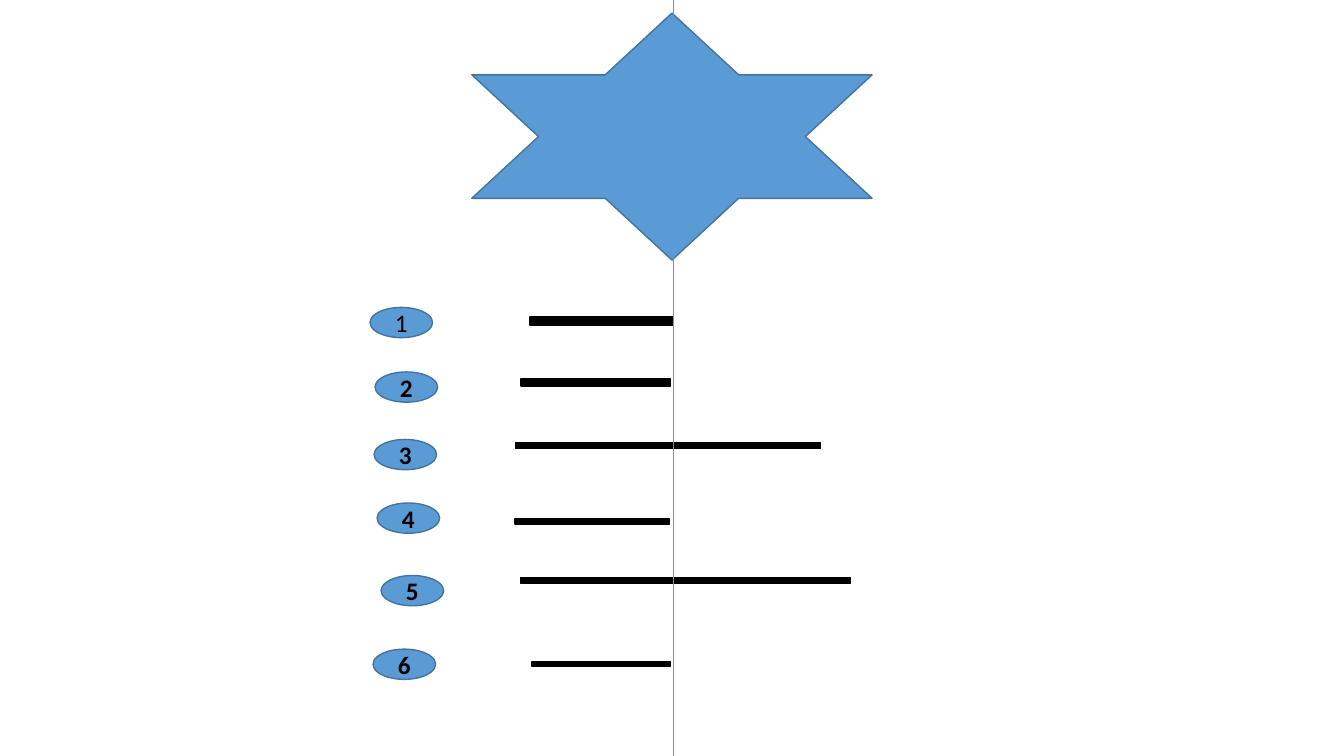
import pptx
import pptx.dml.color
import pptx.enum.shapes
import pptx.enum.text
import pptx.oxml
import pptx.oxml.ns
import pptx.util

Inches = pptx.util.Inches
Pt = pptx.util.Pt
PRESET = pptx.enum.shapes.MSO_SHAPE

BLUE = "5B9BD5"
DARK_BLUE = "43739E"
BLACK = "000000"


def colour(hex_value):
    return pptx.dml.color.RGBColor.from_string(hex_value)


class StarSlide:
    font = "Calibri"
    number_size = 18

    def __init__(self, deck):
        self.slide = deck.slides.add_slide(deck.slide_layouts[6])

    def figure(self, preset, left, top, width, height, fill, outline):
        figure = self.slide.shapes.add_shape(
            preset, Inches(left), Inches(top), Inches(width), Inches(height))
        figure.shadow.inherit = False
        figure.fill.solid()
        figure.fill.fore_color.rgb = colour(fill)
        figure.line.color.rgb = colour(outline)
        figure.line.width = Pt(1)
        return figure

    def star(self, left, top, width, height):
        self.figure(PRESET.STAR_6_POINT, left, top, width, height, BLUE, DARK_BLUE)

    def bar(self, left, top, width, height):
        self.figure(PRESET.MATH_MINUS, left, top, width, height, BLACK, BLACK)

    def number(self, label, left, top, bold):
        badge = self.figure(PRESET.OVAL, left, top, 0.62, 0.3, BLUE, DARK_BLUE)
        badge.text_frame.vertical_anchor = pptx.enum.text.MSO_ANCHOR.MIDDLE
        paragraph = badge.text_frame.paragraphs[0]
        paragraph.alignment = pptx.enum.text.PP_ALIGN.CENTER
        run = paragraph.add_run()
        run.text = label
        run.font.name = self.font
        run.font.size = Pt(self.number_size)
        run.font.bold = bold
        run.font.color.rgb = colour(BLACK)

    def axis(self, x, bottom):
        axis = self.slide.shapes.add_connector(
            pptx.enum.shapes.MSO_CONNECTOR.STRAIGHT,
            Inches(x), Inches(0), Inches(x), Inches(bottom))
        axis.line.color.rgb = colour(BLUE)
        axis.line.width = Pt(0.5)
        properties = axis._element.spPr
        properties.append(properties.makeelement(pptx.oxml.ns.qn("a:effectLst"), {}))


def main():
    deck = pptx.Presentation()
    deck.slide_width = Inches(13.33)
    deck.slide_height = Inches(7.5)
    page = StarSlide(deck)

    rows = [
        ((3.67, 3.05), (5, 3.02, 1.94, 0.33)),
        ((3.72, 3.69), (4.9, 3.65, 2.02, 0.29)),
        ((3.71, 4.36), (4.57, 4.3, 4.11, 0.24)),
        ((3.74, 4.99), (4.83, 5.07, 2.09, 0.21)),
        ((3.78, 5.71), (4.57, 5.64, 4.46, 0.24)),
        ((3.7, 6.44), (5.03, 6.48, 1.87, 0.21)),
    ]
    for _, bar_box in rows:
        page.bar(*bar_box)
    page.star(4.68, 0.13, 3.97, 2.45)
    for position, (number_corner, _) in enumerate(rows, 1):
        page.number(str(position), *number_corner, bold=position > 1)
    page.axis(6.68, 7.5)

    deck.save("out.pptx")


if __name__ == "__main__":
    main()
